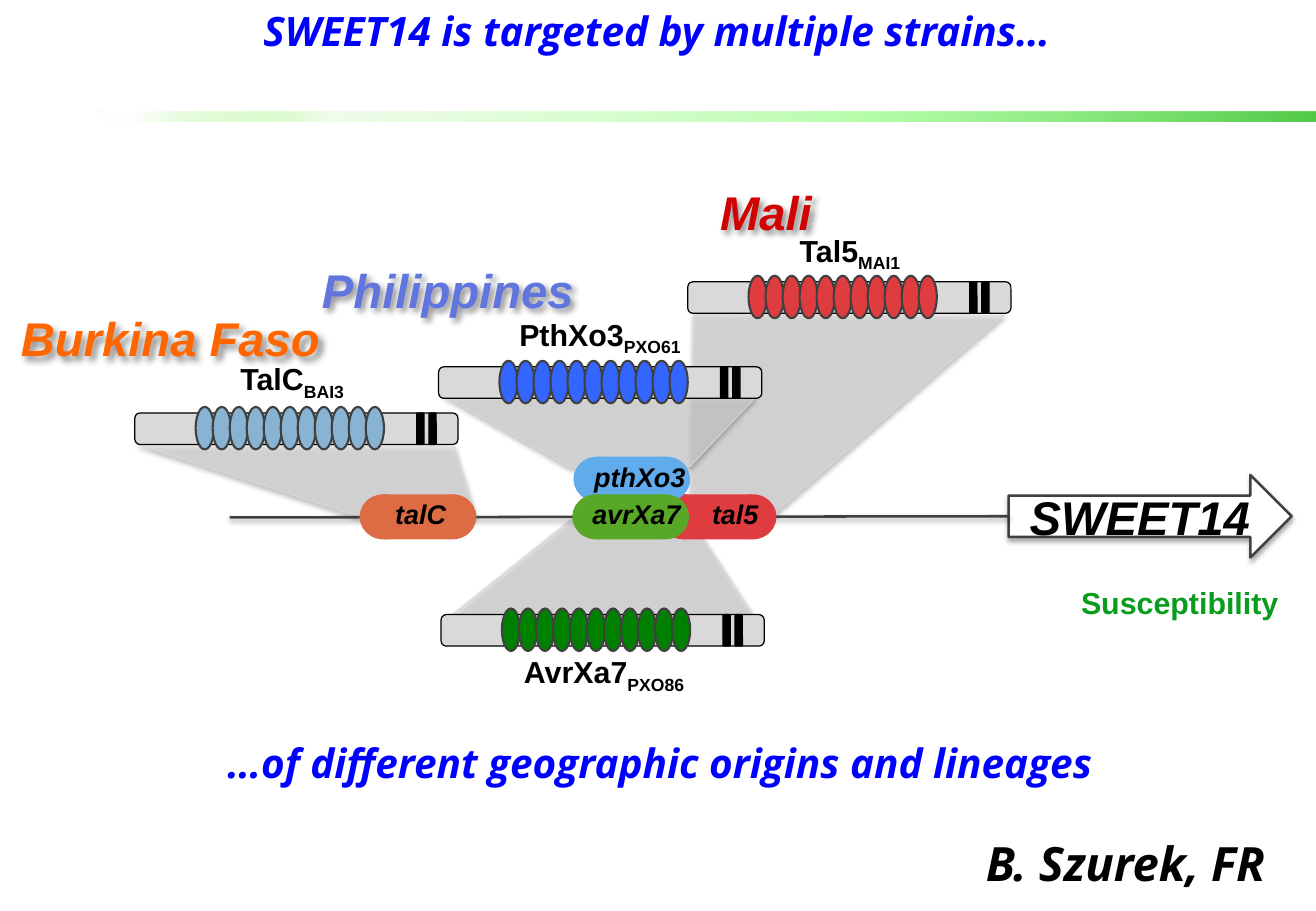
from lxml import etree
from pptx import Presentation
from pptx import util as u
from pptx.dml.color import RGBColor
from pptx.enum import shapes, text
from pptx.oxml import parse_xml
from pptx.oxml.ns import qn, nsdecls

Inches, Pt = u.Inches, u.Pt
hex_color = RGBColor.from_string
SHAPE = shapes.MSO_SHAPE
ALIGN = text.PP_ALIGN
FAN_SHADOW = (38, 3.1, 1.6, 90)
ARROW_SHADOW = (35, 3.1, 1.8, 90)
COUNTRY_SHADOW = (43, 4, 3, 45)


def style(shape, fill=None, line=None, width=1.5, opacity=100, shadow=None):
    """Set fill, outline and shadow; shadow is opacity %, blur pt, distance pt, angle."""
    if fill:
        shape.fill.solid()
        shape.fill.fore_color.rgb = hex_color(fill)
        if opacity < 100:
            color = shape._element.spPr.find(".//" + qn("a:srgbClr"))
            etree.SubElement(color, qn("a:alpha"), val=str(opacity * 1000))
    if line:
        shape.line.color.rgb = hex_color(line)
        shape.line.width = Pt(width)
    effects = etree.SubElement(shape._element.spPr, qn("a:effectLst"))
    if shadow:
        strength, blur, distance, angle = shadow
        outer = etree.SubElement(
            effects, qn("a:outerShdw"), blurRad=str(Pt(blur)), dist=str(Pt(distance)),
            dir=str(angle * 60000), algn="ctr", rotWithShape="0")
        color = etree.SubElement(outer, qn("a:srgbClr"), val="000000")
        etree.SubElement(color, qn("a:alpha"), val=str(strength * 1000))


def write(shape, words, size=18, color="000000", font="Arial", italic=False,
          align=ALIGN.RIGHT, anchor=text.MSO_ANCHOR.TOP, wrap=False, grow=True, subscript=None):
    frame = shape.text_frame
    frame.word_wrap = wrap
    frame.vertical_anchor = anchor
    if grow:
        frame.auto_size = text.MSO_AUTO_SIZE.SHAPE_TO_FIT_TEXT
    paragraph = frame.paragraphs[0]
    paragraph.alignment = align
    for part in filter(None, (words, subscript)):
        run = paragraph.add_run()
        run.text = part
        run.font.name, run.font.size = font, Pt(size)
        run.font.bold, run.font.italic = True, italic
        run.font.color.rgb = hex_color(color)
        if part == subscript:
            run.font._element.set("baseline", "-25000")


prs = Presentation()
prs.slide_width, prs.slide_height = Inches(10.83), Inches(7.5)
slide = prs.slides.add_slide(prs.slide_layouts[5])
canvas = slide.shapes

# Headline and the line that completes it
headline = canvas.title
headline.left, headline.top = Inches(-0.03), Inches(0)
headline.width, headline.height = Inches(10.87), Inches(0.51)
ending = canvas.add_textbox(Inches(0), Inches(6.03), Inches(10.86), Inches(0.51))
for box, words in ((headline, "SWEET14 is targeted by multiple strains…"),
                   (ending, "…of different geographic origins and lineages")):
    write(box, words, size=24, color="0000FF", font="Open Sans", italic=True,
          align=ALIGN.CENTER, wrap=True)

# Green divider
divider = canvas.add_shape(SHAPE.ROUND_2_DIAG_RECTANGLE,
                           Inches(0.81), Inches(0.92), Inches(10.02), Inches(0.08))
divider.line.fill.background()
style(divider)
stops = "".join(
    f'<a:gs pos="{pos * 1000}"><a:srgbClr val="{color}"><a:alpha val="{alpha * 1000}"/></a:srgbClr></a:gs>'
    for pos, color, alpha in ((0, "50C947", 100), (39, "86FE72", 57), (81, "BBF9A5", 23),
                              (87, "DCFCD0", 100), (93, "E7FDDF", 100), (97, "FFFFFF", 100)))
divider._element.spPr.find(qn("a:prstGeom")).addnext(parse_xml(
    f'<a:gradFill {nsdecls("a")} rotWithShape="1"><a:gsLst>{stops}</a:gsLst>'
    '<a:path path="circle"><a:fillToRect l="100000" t="100000"/></a:path></a:gradFill>'))

# Grey fans from each protein to its binding site
for corners in (
    ((5.71, 2.57), (5.68, 4.23), (6.37, 4.23), (8.27, 2.59)),
    ((3.66, 5.11), (4.71, 4.27), (5.69, 4.28), (6.23, 5.11)),
    ((3.65, 3.26), (4.7, 3.85), (5.68, 3.84), (6.22, 3.27)),
    ((1.13, 3.66), (2.95, 4.25), (3.92, 4.25), (3.74, 3.67)),
):
    start, *rest = [(Inches(x), Inches(y)) for x, y in corners]
    outline = canvas.build_freeform(*start)
    outline.add_line_segments(rest, close=False)
    style(outline.convert_to_shape(), "D9D9D9", "D9D9D9", 0.5, opacity=60, shadow=FAN_SHADOW)

# Promoter line leading into the gene arrow
gene = canvas.add_shape(SHAPE.RIGHT_ARROW, Inches(8.3), Inches(3.91), Inches(2.33), Inches(0.68))
style(gene, "FFFFFF", "404040", shadow=ARROW_SHADOW)
write(gene, "SWEET14", size=28, italic=True, align=ALIGN.CENTER,
      anchor=text.MSO_ANCHOR.MIDDLE, wrap=True, grow=False)
promoter = canvas.add_connector(shapes.MSO_CONNECTOR.STRAIGHT,
                                Inches(1.89), Inches(4.26), Inches(8.3), Inches(4.25))
promoter.end_connect(gene, 1)
style(promoter, line="404040", shadow=FAN_SHADOW)

# Binding sites: a pill of two round ends and a middle
for site, left, top, color, label_left, label_width in (
    ("tal5", 5.44, 4.08, "DE3C3F", 5.75, 0.59),
    ("pthXo3", 4.73, 3.77, "60ABEC", 4.76, 0.98),
    ("talC", 2.97, 4.08, "DD6C45", 3.14, 0.63),
    ("avrXa7", 4.72, 4.08, "59A727", 4.74, 0.96),
):
    pill = canvas.add_group_shape().shapes
    for kind, offset, width in ((SHAPE.OVAL, 0.57, 0.37), (SHAPE.OVAL, 0, 0.37),
                                (SHAPE.ROUNDED_RECTANGLE, 0.14, 0.65)):
        style(pill.add_shape(kind, Inches(left + offset), Inches(top), Inches(width), Inches(0.35)),
              color, color)
    label = pill.add_textbox(Inches(label_left), Inches(top - 0.03), Inches(label_width), Inches(0.37))
    write(label, site, size=16, italic=True)

# Proteins: a bar with eleven repeats and two black marks
for protein, strain, left, top, color, label_left, label_top, label_width, align in (
    ("TalC", "BAI3", 1.11, 3.4, "89B3D2", 1.82, 2.92, 1.11, ALIGN.RIGHT),
    ("AvrXa7", "PXO86", 3.63, 5.06, "008000", 4.13, 5.33, 1.6, ALIGN.RIGHT),
    ("PthXo3", "PXO61", 3.61, 3.02, "3366FF", 4.09, 2.55, 1.61, ALIGN.RIGHT),
    ("Tal5", "MAI1", 5.66, 2.32, "DE3C3F", 6.45, 1.86, 1.09, ALIGN.CENTER),
):
    bar = canvas.add_group_shape().shapes
    parts = [(SHAPE.ROUNDED_RECTANGLE, 0, 0, 2.66, 0.26, "D9D9D9", "000000", 0.75)]
    parts += [(SHAPE.OVAL, 0.5 + 0.14 * i, -0.05, 0.15, 0.35, color, "404040", 1.25)
              for i in range(11)]
    parts += [(SHAPE.ROUNDED_RECTANGLE, x, 0, 0.06, 0.26, "000000", "000000", 0.75)
              for x in (2.42, 2.32)]
    for kind, dx, dy, width, height, fill, line, weight in parts:
        style(bar.add_shape(kind, Inches(left + dx), Inches(top + dy), Inches(width), Inches(height)),
              fill, line, weight)
    label = canvas.add_textbox(Inches(label_left), Inches(label_top), Inches(label_width), Inches(0.4))
    write(label, protein, subscript=strain, align=align)

# Countries of origin
for country, left, top, width, color in (
    (" Philippines", 2.41, 2.1, 2.41, "6075DD"),
    ("Burkina Faso", 0.04, 2.5, 2.69, "FF6600"),
    ("Mali", 5.81, 1.46, 0.97, "D10202"),
):
    origin = canvas.add_textbox(Inches(left), Inches(top), Inches(width), Inches(0.57))
    write(origin, country, size=28, color=color, italic=True)
    style(origin, shadow=COUNTRY_SHADOW)

outcome = canvas.add_textbox(Inches(8.78), Inches(4.76), Inches(1.84), Inches(0.4))
write(outcome, "Susceptibility", color="099C1D")
credit = canvas.add_textbox(Inches(7.77), Inches(6.82), Inches(2.84), Inches(0.57))
write(credit, "B. Szurek, FR ", size=28, font="Open Sans", italic=True)

prs.save("out.pptx")
